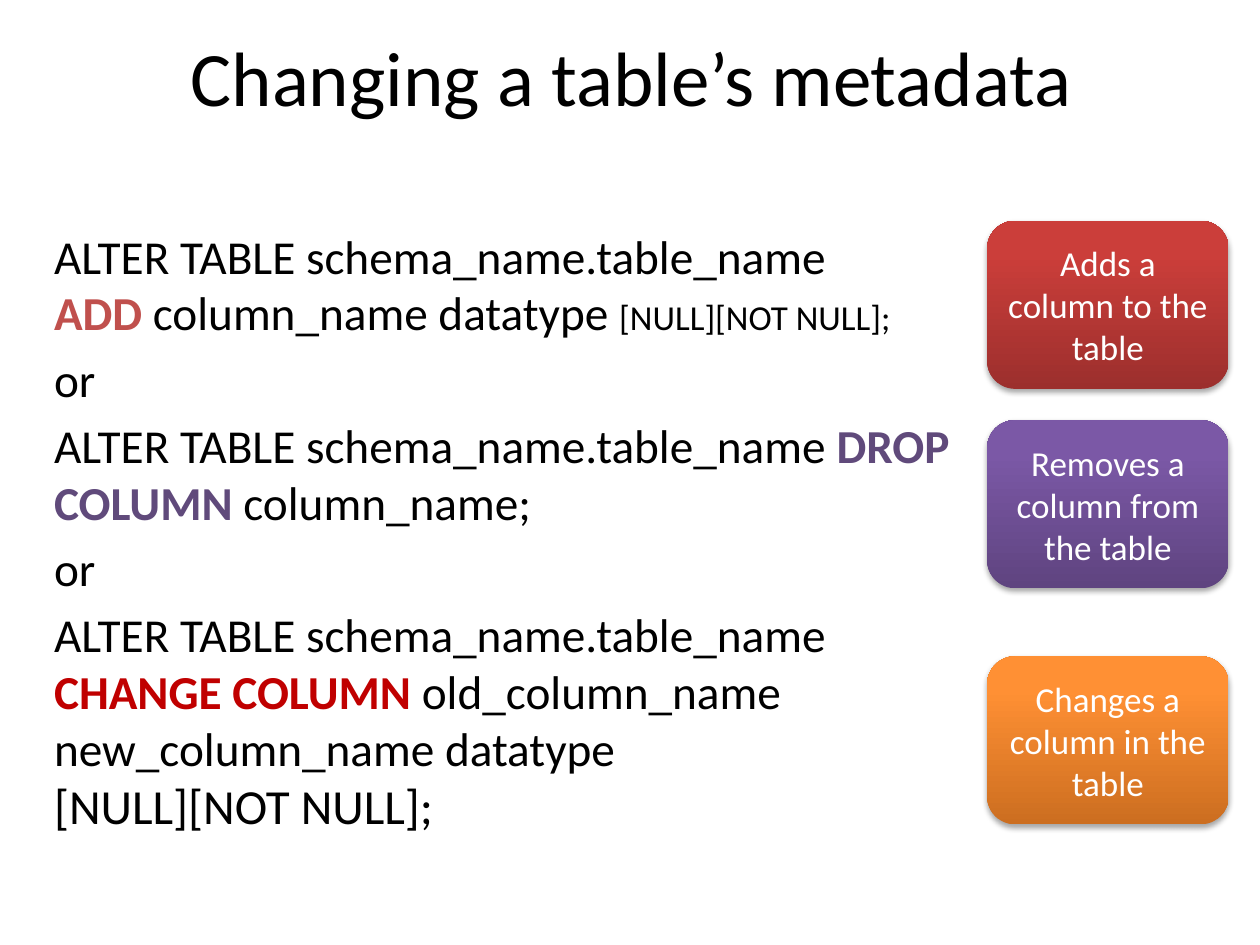
import pptx
import pptx.util
import pptx.dml.color
import pptx.enum.shapes
import pptx.enum.text
import pptx.oxml
import pptx.oxml.ns

Cm = pptx.util.Cm
Pt = pptx.util.Pt
RGB = pptx.dml.color.RGBColor
ALIGN = pptx.enum.text.PP_ALIGN
ANCHOR = pptx.enum.text.MSO_ANCHOR

BLACK = RGB(0x00, 0x00, 0x00)
WHITE = RGB(0xFF, 0xFF, 0xFF)
ROSE = RGB(0xC0, 0x50, 0x4D)
PLUM = RGB(0x60, 0x4A, 0x7B)
RED = RGB(0xC0, 0x00, 0x00)

CARDS = [
    (4.45, "Adds a column to the table", RGB(0x9C, 0x2F, 0x2D), RGB(0xCB, 0x3E, 0x3A)),
    (8.47, "Removes a column from the table", RGB(0x5F, 0x44, 0x80), RGB(0x7B, 0x58, 0xA6)),
    (13.23, "Changes a column in the table", RGB(0xCC, 0x6E, 0x20), RGB(0xFF, 0x90, 0x34)),
]

ALTER = ("ALTER TABLE schema_name.table_name ", {})
OR = [("or", {})]
CODE = [
    [("ALTER TABLE schema_name.table_name\n", {}),
     ("ADD ", {"color": ROSE, "bold": True}),
     ("column_name datatype ", {}),
     ("[NULL][NOT NULL];", {"size": 20})],
    OR,
    [ALTER, ("DROP COLUMN ", {"color": PLUM, "bold": True}), ("column_name;", {})],
    OR,
    [ALTER, ("CHANGE COLUMN ", {"color": RED, "bold": True}),
     ("old_column_name \nnew_column_name datatype \n", {}),
     ("[NULL][NOT NULL];", {"size": 28})],
]

SHADOW = (
    '<a:outerShdw %s blurRad="40000" dist="23000" dir="5400000" rotWithShape="0">'
    '<a:srgbClr val="000000"><a:alpha val="35000"/></a:srgbClr></a:outerShdw>'
    % pptx.oxml.ns.nsdecls("a")
)


def write(para, text, size=27, color=BLACK, bold=False):
    for i, line in enumerate(text.split("\n")):
        if i:
            para.add_line_break()
        if line:
            run = para.add_run()
            run.text = line
            run.font.name = "Calibri"
            run.font.size = Pt(size)
            run.font.bold = bold
            run.font.color.rgb = color


def place(shape, left, top, width, height):
    shape.left, shape.top = Cm(left), Cm(top)
    shape.width, shape.height = Cm(width), Cm(height)


def center(shape):
    frame = shape.text_frame
    frame.word_wrap = True
    frame.vertical_anchor = ANCHOR.MIDDLE
    para = frame.paragraphs[0]
    para.alignment = ALIGN.CENTER
    return para


def add_title(slide, text):
    title = slide.shapes.title
    place(title, 1.3, 0.1, 22.86, 2.87)
    write(center(title), text, size=44)


def add_code(slide, paras):
    box = slide.shapes.add_textbox(Cm(0.84), Cm(4.45), Cm(19.25), Cm(13.54))
    frame = box.text_frame
    frame.word_wrap = True
    for i, runs in enumerate(paras):
        para = frame.add_paragraph() if i else frame.paragraphs[0]
        para.space_before = Pt(5.4)
        for text, style in runs:
            write(para, text, **style)


def add_card(slide, top, text, dark, light):
    kind = pptx.enum.shapes.MSO_SHAPE.ROUNDED_RECTANGLE
    card = slide.shapes.add_shape(kind, Cm(19.9), Cm(top), Cm(4.87), Cm(3.39))
    card.line.fill.background()
    card.fill.gradient()
    card.fill.gradient_angle = 90
    for stop, spot, color in zip(card.fill.gradient_stops, (0, 0.8), (dark, light)):
        stop.position = spot
        stop.color.rgb = color
    card.shadow.inherit = False
    effects = card._element.spPr.find(pptx.oxml.ns.qn("a:effectLst"))
    effects.append(pptx.oxml.parse_xml(SHADOW))
    write(center(card), text, size=20, color=WHITE)


def main():
    deck = pptx.Presentation()
    deck.slide_width, deck.slide_height = Cm(25.4), Cm(19.05)
    slide = deck.slides.add_slide(deck.slide_layouts[5])
    add_title(slide, "Changing a table’s metadata")
    add_code(slide, CODE)
    for card in CARDS:
        add_card(slide, *card)
    deck.save("out.pptx")


if __name__ == "__main__":
    main()
